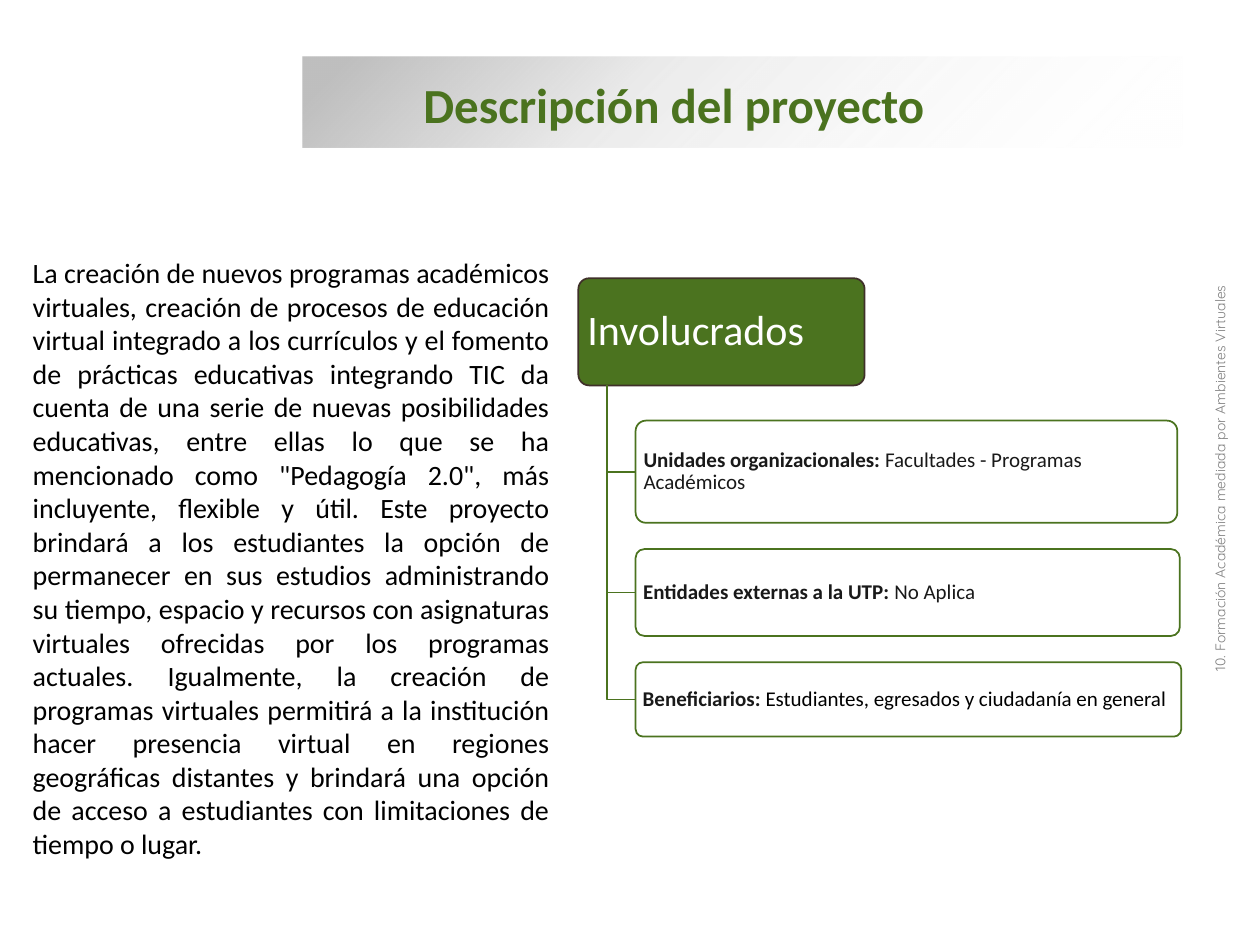
from lxml import etree
from pptx import Presentation
from pptx.dml.color import RGBColor
from pptx.enum.shapes import MSO_SHAPE
from pptx.enum.text import MSO_ANCHOR, MSO_AUTO_SIZE, PP_ALIGN
from pptx.oxml import parse_xml
from pptx.oxml.ns import nsdecls, qn
from pptx.util import Cm, Pt

RECT, ROUNDED = MSO_SHAPE.RECTANGLE, MSO_SHAPE.ROUNDED_RECTANGLE
MIDDLE, TOP = MSO_ANCHOR.MIDDLE, MSO_ANCHOR.TOP
LEFT, CENTER, JUSTIFY = PP_ALIGN.LEFT, PP_ALIGN.CENTER, PP_ALIGN.JUSTIFY
NO_AUTOFIT = MSO_AUTO_SIZE.NONE

COLORS = {
    "green": "4B731F", "brown": "3F3029", "white": "FFFFFF", "black": "000000",
    "ink": "191919", "gray": "808080", "silver": "BFBFBF",
}
# Position in %, colour, opacity in %
BAND_STOPS = [(5, "silver", 100), (37, "silver", 31), (100, "white", 0)]

DESCRIPTION = (
    "La creación de nuevos programas académicos virtuales, creación de procesos de "
    "educación virtual integrado a los currículos y el fomento de prácticas educativas "
    "integrando TIC da cuenta de una serie de nuevas posibilidades educativas, entre "
    "ellas lo que se ha mencionado como \"Pedagogía 2.0\", más incluyente, flexible y "
    "útil. Este proyecto brindará a los estudiantes la opción de permanecer en sus "
    "estudios administrando su tiempo, espacio y recursos con asignaturas virtuales "
    "ofrecidas por los programas actuales. Igualmente, la creación de programas "
    "virtuales permitirá a la institución hacer presencia virtual en regiones "
    "geográficas distantes y brindará una opción de acceso a estudiantes con "
    "limitaciones de tiempo o lugar."
)
# Label, detail, detail colour, alignment, width and height in cm
GROUPS = [
    ("Unidades organizacionales: ", "Facultades - Programas Académicos", "ink", LEFT, 10.92, 2.06),
    ("Entidades externas a la UTP: ", "No Aplica", "ink", LEFT, 10.97, 1.75),
    ("Beneficiarios: ", "Estudiantes, egresados y ciudadanía en general", "black", JUSTIFY, 11, 1.5),
]


def rgb(name):
    return RGBColor.from_string(COLORS[name])


def set_text(sp, runs, size, align=LEFT, anchor=TOP, font="Calibri", spacing=1.0):
    """Write one paragraph from (text, colour, bold) runs."""
    tf = sp.text_frame
    tf.word_wrap = True
    tf.auto_size = NO_AUTOFIT
    tf.vertical_anchor = anchor
    p = tf.paragraphs[0]
    p.alignment = align
    p.line_spacing = spacing
    for text, color, bold in runs:
        r = p.add_run()
        r.text = text
        r.font.name, r.font.size, r.font.bold = font, Pt(size), bold
        r.font.color.rgb = rgb(color)


def add_title(s, x, y, w, h):
    # Fading band, placed behind the title
    band = s.shapes.add_shape(RECT, Cm(x), Cm(y), Cm(w), Cm(h))
    band.shadow.inherit = False
    band.line.fill.background()
    stops = "".join(
        f'<a:gs pos="{pos * 1000}"><a:srgbClr val="{COLORS[color]}">'
        f'<a:alpha val="{alpha * 1000}"/></a:srgbClr></a:gs>'
        for pos, color, alpha in BAND_STOPS)
    band.element.spPr.find(qn("a:prstGeom")).addnext(parse_xml(
        f'<a:gradFill {nsdecls("a")} rotWithShape="1"><a:gsLst>{stops}</a:gsLst>'
        '<a:lin ang="2700000" scaled="0"/></a:gradFill>'))
    title = s.shapes.title
    title.element.addprevious(band.element)

    # Title text
    title.left, title.top = Cm(x + 2.18), Cm(y + 0.23)
    title.width, title.height = Cm(15.75), Cm(1.45)
    set_text(title, [("Descripción del proyecto", "green", True)], 28, anchor=MIDDLE)


def add_description(s, x, y, w, h):
    sp = s.shapes.add_textbox(Cm(x), Cm(y), Cm(w), Cm(h))
    set_text(sp, [(DESCRIPTION, "black", False)], 16, JUSTIFY)


def add_node(s, x, y, w, h, fill, line, inset):
    sp = s.shapes.add_shape(ROUNDED, Cm(x), Cm(y), Cm(w), Cm(h))
    sp.adjustments[0] = 0.1
    sp.shadow.inherit = False
    sp.fill.solid()
    sp.fill.fore_color.rgb = rgb(fill)
    sp.line.color.rgb = rgb(line)
    sp.line.width = Pt(1)
    tf = sp.text_frame
    tf.margin_left = tf.margin_right = Cm(inset)
    tf.margin_top = tf.margin_bottom = Cm(0.08)
    return sp


def add_branch(s, x, y, x2, y2):
    """Draw a line down from (x, y) and then across to (x2, y2)."""
    fb = s.shapes.build_freeform(Cm(x), Cm(y))
    fb.add_line_segments([(Cm(x), Cm(y2)), (Cm(x2), Cm(y2))], close=False)
    sp = fb.convert_to_shape()
    sp.shadow.inherit = False
    sp.fill.background()
    sp.line.color.rgb = rgb("green")
    sp.line.width = Pt(1)


def add_stakeholders(s, x, y):
    # Root node
    root_w, root_h, gap = 5.77, 2.16, 0.53
    root = add_node(s, x, y, root_w, root_h, "green", "brown", 0.12)
    set_text(root, [("Involucrados", "white", False)], 24, anchor=MIDDLE, spacing=0.9)

    # Child nodes hang from a trunk at a tenth of the root's width
    trunk_x, child_x = x + root_w / 10, x + root_w / 5
    child_y = y + 2.87
    for label, detail, color, align, w, h in GROUPS:
        add_branch(s, trunk_x, y + root_h, child_x, child_y + h / 2)
        sp = add_node(s, child_x, child_y, w, h, "white", "green", 0.1)
        clr = sp.element.spPr.find(qn("a:solidFill"))[0]
        etree.SubElement(clr, qn("a:alpha"), val="90000")
        set_text(sp, [(label, "ink", True), (detail, color, False)], 12,
                 align, MIDDLE, spacing=0.9)
        child_y += h + gap


def add_side_label(s, x, y, w, h):
    sp = s.shapes.add_textbox(Cm(x), Cm(y), Cm(w), Cm(h))
    sp.rotation = 270
    set_text(sp, [("10. Formación Académica mediada por Ambientes Virtuales", "gray", False)],
             8, CENTER, font="Quicksand")


def main():
    prs = Presentation()
    prs.slide_width, prs.slide_height = Cm(25.4), Cm(19.05)
    s = prs.slides.add_slide(prs.slide_layouts[5])
    add_title(s, 6.1, 1.14, 17.73, 1.83)
    add_description(s, 0.41, 5.03, 10.92, 12.57)
    add_stakeholders(s, 11.66, 5.61)
    add_side_label(s, 18.62, 9.17, 12.29, 0.94)
    prs.save("out.pptx")


if __name__ == "__main__":
    main()
